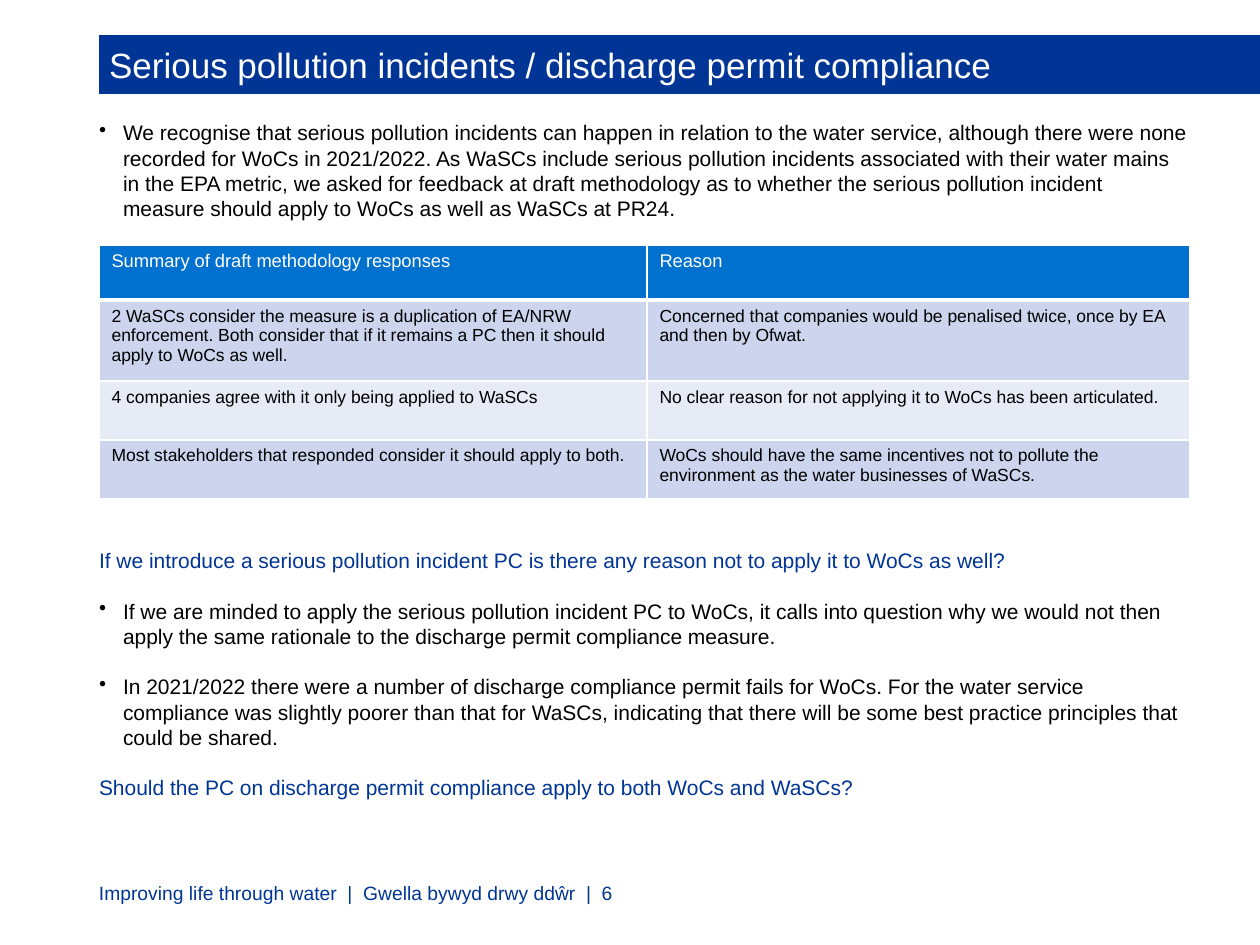
import pptx
import pptx.dml.color
import pptx.enum.text
import pptx.oxml
import pptx.oxml.ns
import pptx.util

PX = 914400 / 126
FONT = "Arial"
COLORS = {"navy": "003595", "blue": "0071CE", "band": "CCD5ED",
          "pale": "E7EBF6", "white": "FFFFFF", "black": "000000"}
LINE_PT = 14.4
BULLET_INDENT = 24

TITLE = "Serious pollution incidents / discharge permit compliance"
FOOTER = "Improving life through water  |  Gwella bywyd drwy ddŵr  |  6"
INTRO = [
    ("bullet", "We recognise that serious pollution incidents can happen in relation to the water "
     "service, although there were none recorded for WoCs in 2021/2022. As WaSCs include serious "
     "pollution incidents associated with their water mains in the EPA metric, we asked for "
     "feedback at draft methodology as to whether the serious pollution incident measure should "
     "apply to WoCs as well as WaSCs at PR24."),
]
DISCUSSION = [
    ("question", "If we introduce a serious pollution incident PC is there any reason not to "
     "apply it to WoCs as well?"),
    ("bullet", "If we are minded to apply the serious pollution incident PC to WoCs, it calls "
     "into question why we would not then apply the same rationale to the discharge permit "
     "compliance measure."),
    ("bullet", "In 2021/2022 there were a number of discharge compliance permit fails for WoCs. "
     "For the water service compliance was slightly poorer than that for WaSCs, indicating that "
     "there will be some best practice principles that could be shared."),
    ("question", "Should the PC on discharge permit compliance apply to both WoCs and WaSCs?"),
]
RESPONSES = [
    ("Summary of draft methodology responses", "Reason"),
    ("2 WaSCs consider the measure is a duplication of EA/NRW enforcement. Both consider that "
     "if it remains a PC then it should apply to WoCs as well.",
     "Concerned that companies would be penalised twice, once by EA and then by Ofwat."),
    ("4 companies agree with it only being applied to WaSCs",
     "No clear reason for not applying it to WoCs has been articulated."),
    ("Most stakeholders that responded consider it should apply to both.",
     "WoCs should have the same incentives not to pollute the environment as the water "
     "businesses of WaSCs."),
]
COL_WIDTHS = [548, 543]
ROW_HEIGHTS = [55, 81, 59, 59]


def px(n):
    """Turn pixels into EMU."""
    return pptx.util.Emu(round(n * PX))


def rgb(name):
    """Return a named colour."""
    return pptx.dml.color.RGBColor.from_string(COLORS[name])


def style(p, size, color):
    """Format the runs of a paragraph."""
    for r in p.runs:
        r.font.name = FONT
        r.font.size = pptx.util.Pt(size)
        r.font.color.rgb = rgb(color)


def set_margins(tf, left, top, right, bottom):
    """Set the insets of a text frame in pixels."""
    tf.margin_left, tf.margin_top = px(left), px(top)
    tf.margin_right, tf.margin_bottom = px(right), px(bottom)


def add_text_frame(slide, box):
    """Add a wrapping text box without insets and return its text frame."""
    tf = slide.shapes.add_textbox(*map(px, box)).text_frame
    tf.word_wrap = True
    set_margins(tf, 0, 0, 0, 0)
    return tf


def add_bullet(p):
    """Give a paragraph a round bullet with a hanging indent."""
    pPr = p._p.get_or_add_pPr()
    pPr.set("marL", str(px(BULLET_INDENT)))
    pPr.set("indent", str(-px(BULLET_INDENT)))
    pPr.append(pptx.oxml.parse_xml(
        f'<a:buChar {pptx.oxml.ns.nsdecls("a")} char="•"/>'))


def add_title(slide, box):
    """Place the title band."""
    sp = slide.shapes.title
    sp.left, sp.top, sp.width, sp.height = map(px, box)
    sp.fill.solid()
    sp.fill.fore_color.rgb = rgb("navy")
    tf = sp.text_frame
    tf.text = TITLE
    tf.auto_size = pptx.enum.text.MSO_AUTO_SIZE.NONE
    tf.vertical_anchor = pptx.enum.text.MSO_ANCHOR.MIDDLE
    set_margins(tf, 10, 5, 49, 5)
    p = tf.paragraphs[0]
    p.alignment = pptx.enum.text.PP_ALIGN.LEFT
    style(p, 20, "white")


def add_body(slide, box, items):
    """Write bullets and questions one line apart."""
    tf = add_text_frame(slide, box)
    for i, (kind, text) in enumerate(items):
        p = tf.add_paragraph() if i else tf.paragraphs[0]
        p.text = text
        if kind == "bullet":
            add_bullet(p)
        p.line_spacing = pptx.util.Pt(LINE_PT)
        if i:
            p.space_before = pptx.util.Pt(LINE_PT)
        style(p, 12, "black" if kind == "bullet" else "navy")


def set_borders(cell, top, bottom):
    """Draw white cell borders with the given top and bottom widths."""
    tcPr = cell._tc.get_or_add_tcPr()
    widths = {"lnL": 1, "lnR": 1, "lnT": top, "lnB": bottom}
    for i, (tag, width) in enumerate(widths.items()):
        tcPr.insert(i, pptx.oxml.parse_xml(
            f'<a:{tag} {pptx.oxml.ns.nsdecls("a")} w="{pptx.util.Pt(width)}"><a:solidFill>'
            f'<a:srgbClr val="{COLORS["white"]}"/></a:solidFill></a:{tag}>'))


def add_responses(slide, box):
    """Build the table of consultation responses."""
    table = slide.shapes.add_table(len(RESPONSES), len(COL_WIDTHS), *map(px, box)).table
    for col, width in zip(table.columns, COL_WIDTHS):
        col.width = px(width)
    for i, (row, height) in enumerate(zip(table.rows, ROW_HEIGHTS)):
        row.height = px(height)
        fill = "blue" if i == 0 else "band" if i % 2 else "pale"
        for cell, text in zip(row.cells, RESPONSES[i]):
            cell.text = text
            cell.fill.solid()
            cell.fill.fore_color.rgb = rgb(fill)
            set_borders(cell, 3 if i == 1 else 1, 3 if i == 0 else 1)
            style(cell.text_frame.paragraphs[0], 10 if i else 10.5, "black" if i else "white")


def add_footer(slide, box):
    """Write the footer line."""
    tf = add_text_frame(slide, box)
    tf.text = FOOTER
    tf.vertical_anchor = pptx.enum.text.MSO_ANCHOR.MIDDLE
    style(tf.paragraphs[0], 11, "navy")


def main():
    """Build and save the slide."""
    prs = pptx.Presentation()
    prs.slide_width, prs.slide_height = px(1260), px(945)
    slide = prs.slides.add_slide(prs.slide_layouts[5])
    add_title(slide, (99, 35, 1161, 59))
    add_body(slide, (99, 120, 1091, 101), INTRO)
    add_responses(slide, (99, 245, sum(COL_WIDTHS), sum(ROW_HEIGHTS)))
    add_body(slide, (99, 548, 1091, 252), DISCUSSION)
    add_footer(slide, (99, 881, 645, 24))
    prs.save("out.pptx")


if __name__ == "__main__":
    main()
